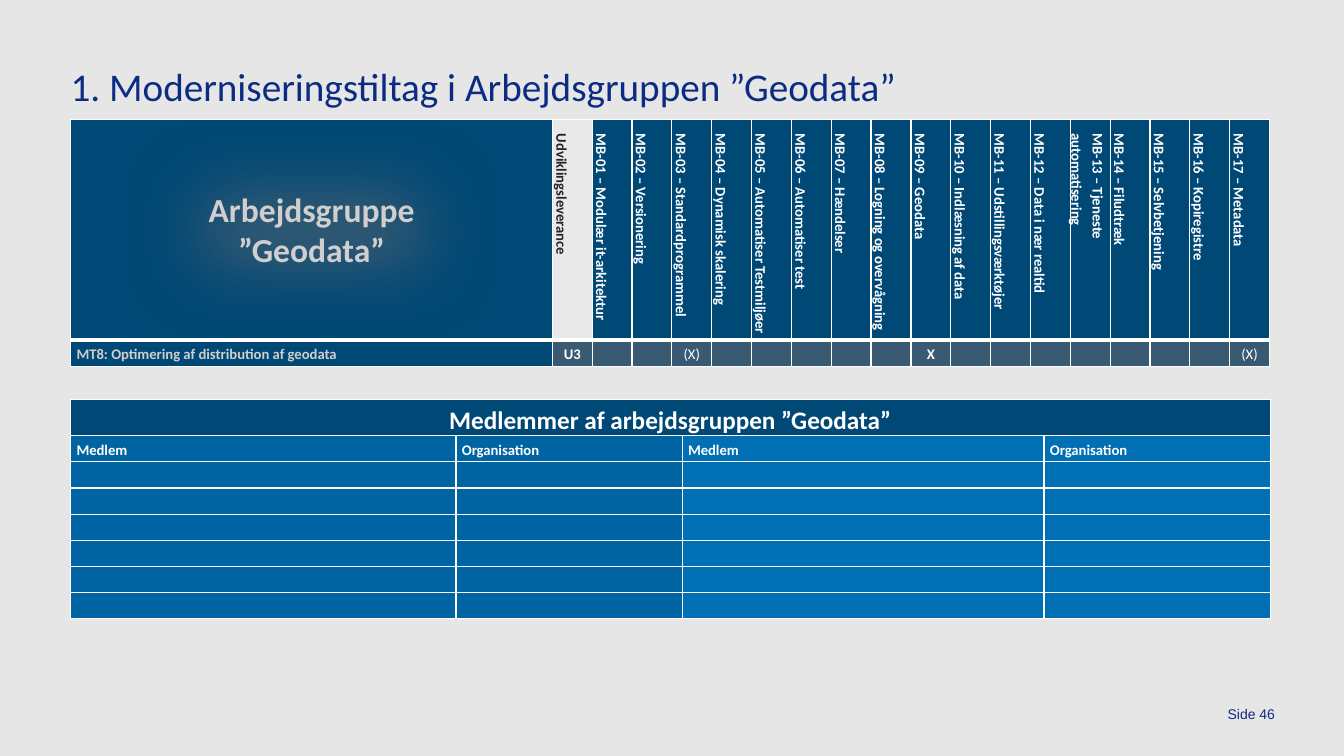
from lxml import etree
from pptx import Presentation
from pptx.dml.color import RGBColor
from pptx.enum import shapes, text
from pptx.oxml import ns
from pptx.util import Cm, Pt

BACKGROUND = RGBColor(0xE7, 0xE6, 0xE6)
TITLE_BLUE = RGBColor(0x0C, 0x2C, 0x83)
NAVY = RGBColor(0x00, 0x48, 0x75)
SLATE = RGBColor(0x38, 0x5B, 0x73)
BLUE = RGBColor(0x00, 0x64, 0xA2)
LIGHT_BLUE = RGBColor(0x00, 0x6F, 0xB4)
PALE = RGBColor(0xE9, 0xE9, 0xE9)
SILVER = RGBColor(0xD0, 0xCE, 0xCE)
INK = RGBColor(0x25, 0x25, 0x25)
WHITE = RGBColor(0xFF, 0xFF, 0xFF)

LEFT, TABLE_WIDTH = 1.78, 30.23
GROUP_WIDTH = 12.14
ROW_HEIGHT = 0.66
CENTER = text.PP_ALIGN.CENTER

MEASURES = [
    "Modulær it-arkitektur", "Versionering", "Standardprogrammel",
    "Dynamisk skalering", "Automatiser Testmiljøer", "Automatiser test",
    "Hændelser", "Logning og overvågning", "Geodata", "Indlæsning af data",
    "Udstillingsværktøjer", "Data i nær realtid", "Tjeneste automatisering",
    "Filudtræk", "Selvbetjening", "Kopiregistre", "Metadata",
]
MARKS = {3: "(X)", 9: "X", 17: "(X)"}  # measure number: mark
MEMBER_HEADINGS = ["Medlem", "Organisation"] * 2
MEMBER_FILLS = [BLUE, BLUE, LIGHT_BLUE, LIGHT_BLUE]
MEMBER_WIDTHS = [9.71, 5.7, 9.12, 5.7]
MEMBER_ROWS = 6


def add_run(paragraph, words, size, color, bold=False, font="Calibri"):
    run = paragraph.add_run()
    run.text = words
    run.font.size = Pt(size)
    run.font.name = font
    run.font.bold = bold
    run.font.color.rgb = color


def clear_margins(frame):
    frame.margin_left = frame.margin_right = 0
    frame.margin_top = frame.margin_bottom = 0


def set_borders(cell, top=1, bottom=1):
    widths = {"a:lnL": 1, "a:lnR": 1, "a:lnT": top, "a:lnB": bottom}
    properties = cell._tc.get_or_add_tcPr()
    for position, (tag, width) in enumerate(widths.items()):
        line = etree.Element(ns.qn(tag), w=str(Pt(width)))
        fill = etree.SubElement(line, ns.qn("a:solidFill"))
        etree.SubElement(fill, ns.qn("a:srgbClr"), val=str(WHITE))
        properties.insert(position, line)


def fill_cell(cell, fill, words="", size=10.5, color=WHITE, bold=True,
              align=None, vertical=False, top=1, bottom=1):
    cell.fill.solid()
    cell.fill.fore_color.rgb = fill
    cell.vertical_anchor = text.MSO_ANCHOR.MIDDLE
    cell.margin_left = cell.margin_right = Cm(0.15)
    cell.margin_top = cell.margin_bottom = 0
    set_borders(cell, top, bottom)
    paragraph = cell.text_frame.paragraphs[0]
    if not words:
        # Keeps an empty row as low as a filled one
        etree.SubElement(paragraph._p, ns.qn("a:endParaRPr"),
                         sz=str(round(size * 100)))
        return
    paragraph.alignment = align
    paragraph.line_spacing = 1.2
    paragraph.space_before = Pt(4)
    add_run(paragraph, words, size, color, bold)
    if vertical:
        cell._tc.get_or_add_tcPr().set("vert", "vert")
        indent = paragraph._p.get_or_add_pPr()
        indent.set("marL", str(Cm(0.2)))
        indent.set("indent", "0")


def add_grid(slide, top, widths, heights):
    frame = slide.shapes.add_table(len(heights), len(widths), Cm(LEFT), Cm(top),
                                   Cm(TABLE_WIDTH), Cm(sum(heights)))
    grid = frame.table
    grid.first_row = grid.horz_banding = False
    for column, width in zip(grid.columns, widths):
        column.width = Cm(width)
    for row, height in zip(grid.rows, heights):
        row.height = Cm(height)
    return grid


def add_title(slide):
    title = slide.shapes.title
    title.left, title.top = Cm(LEFT), Cm(0.94)
    title.width, title.height = Cm(30.5), Cm(1.88)
    frame = title.text_frame
    clear_margins(frame)
    frame.vertical_anchor = text.MSO_ANCHOR.MIDDLE
    paragraph = frame.paragraphs[0]
    paragraph.alignment = text.PP_ALIGN.LEFT
    paragraph.line_spacing = Pt(49.1)
    add_run(paragraph, "1. Moderniseringstiltag i Arbejdsgruppen ”Geodata”",
            28, TITLE_BLUE)


def add_page_number(slide):
    frame = slide.shapes.add_textbox(Cm(29.92), Cm(17.22),
                                     Cm(2.21), Cm(0.97)).text_frame
    clear_margins(frame)
    frame.word_wrap = True
    frame.vertical_anchor = text.MSO_ANCHOR.BOTTOM
    paragraph = frame.paragraphs[0]
    paragraph.alignment = text.PP_ALIGN.RIGHT
    add_run(paragraph, "Side 46", 10, TITLE_BLUE, font="Arial")


def add_measure_table(slide):
    narrow = (TABLE_WIDTH - GROUP_WIDTH) / (len(MEASURES) + 1)
    widths = [GROUP_WIDTH] + [narrow] * (len(MEASURES) + 1)
    grid = add_grid(slide, 3.02, widths, [5.55, ROW_HEIGHT])

    # Heading row
    fill_cell(grid.cell(0, 0), NAVY, bottom=3)
    fill_cell(grid.cell(0, 1), PALE, "Udviklingsleverance", color=INK,
              vertical=True, bottom=3)
    # Row for the initiative
    fill_cell(grid.cell(1, 0), NAVY, "MT8: Optimering af distribution af geodata",
              color=SILVER, top=3)
    fill_cell(grid.cell(1, 1), SLATE, "U3", align=CENTER, top=3)
    # One column per measure
    for number, measure in enumerate(MEASURES, start=1):
        fill_cell(grid.cell(0, number + 1), NAVY, f"MB-{number:02} – {measure}",
                  vertical=True, bottom=3)
        mark = MARKS.get(number, "")
        fill_cell(grid.cell(1, number + 1), SLATE, mark, bold=mark == "X",
                  align=CENTER, top=3)


def add_member_table(slide):
    grid = add_grid(slide, 10.06, MEMBER_WIDTHS,
                    [ROW_HEIGHT] * (MEMBER_ROWS + 2))
    grid.cell(0, 0).merge(grid.cell(0, 3))
    fill_cell(grid.cell(0, 0), NAVY, "Medlemmer af arbejdsgruppen ”Geodata”",
              size=18, align=CENTER)
    for column, (heading, fill) in enumerate(zip(MEMBER_HEADINGS, MEMBER_FILLS)):
        fill_cell(grid.cell(1, column), fill, heading)
        for row in range(2, MEMBER_ROWS + 2):
            fill_cell(grid.cell(row, column), fill)


def add_group_label(slide):
    label = slide.shapes.add_shape(shapes.MSO_SHAPE.ROUNDED_RECTANGLE,
                                   Cm(3.18), Cm(3.02), Cm(9.35), Cm(5.49))
    label.shadow.inherit = False
    label.fill.solid()
    label.fill.fore_color.rgb = SLATE
    label.line.fill.background()
    # Soft edge
    effects = label._element.spPr.find(ns.qn("a:effectLst"))
    etree.SubElement(effects, ns.qn("a:softEdge"), rad=str(Pt(50)))
    frame = label.text_frame
    frame.word_wrap = True
    frame.vertical_anchor = text.MSO_ANCHOR.MIDDLE
    paragraph = frame.paragraphs[0]
    paragraph.alignment = CENTER
    add_run(paragraph, "Arbejdsgruppe ”Geodata”", 24, SILVER, bold=True)


def main():
    deck = Presentation()
    deck.slide_width, deck.slide_height = Cm(33.87), Cm(19.05)
    slide = deck.slides.add_slide(deck.slide_layouts[5])
    slide.background.fill.solid()
    slide.background.fill.fore_color.rgb = BACKGROUND
    add_title(slide)
    add_page_number(slide)
    add_measure_table(slide)
    add_member_table(slide)
    add_group_label(slide)
    deck.save("out.pptx")


if __name__ == "__main__":
    main()
